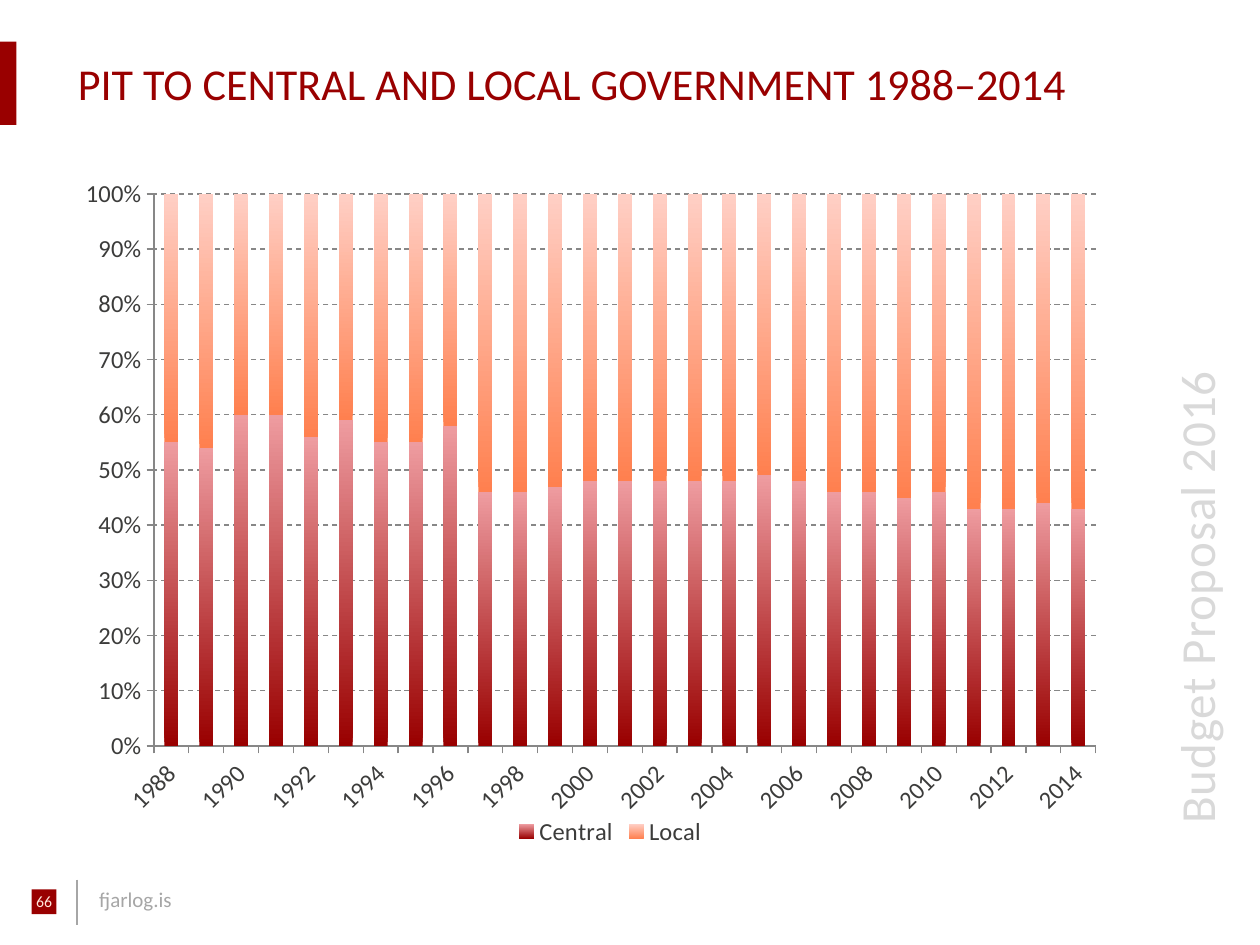
from lxml import etree
from pptx import Presentation
from pptx import util as u
from pptx.chart.data import CategoryChartData
from pptx.dml.color import RGBColor
from pptx.enum import chart as ch, dml, shapes, text
from pptx.oxml import parse_xml
from pptx.oxml.ns import nsdecls, qn

RED = RGBColor(0x99, 0x00, 0x00)
ROSE = RGBColor(0xEE, 0x9C, 0xA0)
CORAL = RGBColor(0xFF, 0x80, 0x4F)
BLUSH = RGBColor(0xFF, 0xCF, 0xC5)
CREAM = RGBColor(0xFF, 0xE6, 0xDC)
INK = RGBColor(0x3C, 0x3C, 0x3B)
AXIS = RGBColor(0x87, 0x87, 0x87)
GREY = RGBColor(0xA6, 0xA6, 0xA6)
PALE = RGBColor(0xD9, 0xD9, 0xD9)
FONT = "Calibri"

YEARS = range(1988, 2015)
CENTRAL = [55, 54, 60, 60, 56, 59, 55, 55, 58, 46, 46, 47, 48, 48,
           48, 48, 48, 49, 48, 46, 46, 45, 46, 43, 43, 44, 43]


def add_text(slide, words, box, size, color, align=text.PP_ALIGN.LEFT,
             anchor=text.MSO_ANCHOR.TOP, inset=(0.25, 0.13), turn=0, gap=0):
    item = slide.shapes.add_textbox(*map(u.Cm, box))
    item.rotation = turn
    frame = item.text_frame
    frame.word_wrap = True
    frame.vertical_anchor = anchor
    frame.margin_left = frame.margin_right = u.Cm(inset[0])
    frame.margin_top = frame.margin_bottom = u.Cm(inset[1])
    para = frame.paragraphs[0]
    para.alignment = align
    run = para.add_run()
    run.text = words
    run.font.name, run.font.size = FONT, u.Pt(size)
    run.font.color.rgb = color
    if gap:
        run.font._element.set("spc", str(round(gap * 100)))


def add_block(slide, box):
    block = slide.shapes.add_shape(shapes.MSO_SHAPE.RECTANGLE, *map(u.Cm, box))
    block.shadow.inherit = False
    block.fill.solid()
    block.fill.fore_color.rgb = RED
    block.line.fill.background()


def add_header(slide, x, y, w, h):
    # Accent at the slide edge, then the title
    add_block(slide, (x, y, 0.33, h))
    add_text(slide, "PIT TO CENTRAL AND LOCAL GOVERNMENT 1988–2014",
             (x + 1.27, y, w - 1.27, h), 25.2, RED,
             anchor=text.MSO_ANCHOR.MIDDLE, inset=(0.3, 0.15))


def add_side(slide, x, y, w, h):
    # Upright label: the box is turned about its centre
    add_text(slide, "Budget Proposal 2016",
             (x + (w - h) / 2, y + (h - w) / 2, h, w), 28, PALE,
             turn=270, gap=0.5)


def add_footer(slide, x, y):
    # Page number, divider and web address
    add_block(slide, (x + 0.64, y + 0.2, 0.5, 0.5))
    add_text(slide, "66", (x, y + 0.1, 1.78, 1.19), 9, CREAM,
             align=text.PP_ALIGN.CENTER, inset=(0.3, 0.15))
    rule = slide.shapes.add_connector(
        shapes.MSO_CONNECTOR.STRAIGHT, u.Cm(x + 1.55), u.Cm(y),
        u.Cm(x + 1.55), u.Cm(y + 0.92))
    rule.line.color.rgb, rule.line.width = GREY, u.Pt(1)
    etree.SubElement(rule._element.spPr, qn("a:effectLst"))
    add_text(slide, "fjarlog.is", (x + 1.75, y + 0.02, 4.75, 0.76), 12, GREY)


def set_plot(chart, x, y, w, h):
    # Fixed inner plot area, as shares of the chart
    area = chart._chartSpace.chart.plotArea
    for old in area.findall(qn("c:layout")):
        area.remove(old)
    sizes = "".join(f'<c:{k} val="{v}"/>'
                    for k, v in zip("xywh", (x, y, w, h)))
    area.insert(0, parse_xml(
        f'<c:layout {nsdecls("c")}><c:manualLayout>'
        '<c:layoutTarget val="inner"/><c:xMode val="edge"/>'
        f'<c:yMode val="edge"/>{sizes}</c:manualLayout></c:layout>'))


def add_bars(slide, x, y, w, h):
    data = CategoryChartData(number_format="0")
    data.categories = [str(year) for year in YEARS]
    data.add_series("Central", CENTRAL)
    data.add_series("Local", [100 - part for part in CENTRAL])
    chart = slide.shapes.add_chart(
        ch.XL_CHART_TYPE.COLUMN_STACKED_100,
        *map(u.Cm, (x, y, w, h)), data).chart
    chart.has_title = False
    chart.font.name, chart.font.size = FONT, u.Pt(14)
    chart.font.color.rgb = INK
    chart.has_legend = True
    chart.legend.position = ch.XL_LEGEND_POSITION.BOTTOM
    chart.legend.include_in_layout = False
    set_plot(chart, 0.082, 0.035, 0.863, 0.81)

    # Columns fade upwards
    plot = chart.plots[0]
    plot.gap_width, plot.overlap = 150, 100
    plot.vary_by_categories = False
    for part, shades in zip(plot.series, ((RED, ROSE), (CORAL, BLUSH))):
        fill = part.format.fill
        fill.gradient()
        fill.gradient_angle = 90
        for stop, shade in zip(fill.gradient_stops, shades):
            stop.color.rgb = shade

    # Axes
    cats, vals = chart.category_axis, chart.value_axis
    for axis in (cats, vals):
        axis.major_tick_mark = ch.XL_TICK_MARK.OUTSIDE
        axis.format.line.color.rgb = AXIS
        axis.format.line.width = u.Pt(0.75)
    vals.minimum_scale, vals.maximum_scale, vals.major_unit = 0, 1, 0.1
    vals.tick_labels.number_format = "0%"
    vals.tick_labels.number_format_is_linked = False
    grid = vals.major_gridlines.format.line
    grid.color.rgb, grid.width = AXIS, u.Pt(0.75)
    grid.dash_style = dml.MSO_LINE.DASH

    # Every second year, slanted
    labels = cats.tick_labels.font
    labels.size = u.Pt(14)
    labels.color.rgb = INK
    cats._element.find(qn("c:txPr")).find(qn("a:bodyPr")).set("rot", "-2700000")
    last = cats._element.find(qn("c:noMultiLvlLbl"))
    for name, step in (("tickLblSkip", 2), ("tickMarkSkip", 1)):
        skip = parse_xml(f'<c:{name} {nsdecls("c")} val="{step}"/>')
        if last is None:
            cats._element.append(skip)
        else:
            last.addprevious(skip)


def main():
    deck = Presentation()
    deck.slide_width, deck.slide_height = u.Cm(25.4), u.Cm(19.05)
    slide = deck.slides.add_slide(deck.slide_layouts[6])
    add_header(slide, 0, 0.84, 24.28, 1.68)
    add_side(slide, 23.38, 3.08, 1.45, 13.77)
    add_bars(slide, 1.3, 3.43, 22, 13.74)
    add_footer(slide, 0, 17.73)
    deck.save("out.pptx")


if __name__ == "__main__":
    main()
